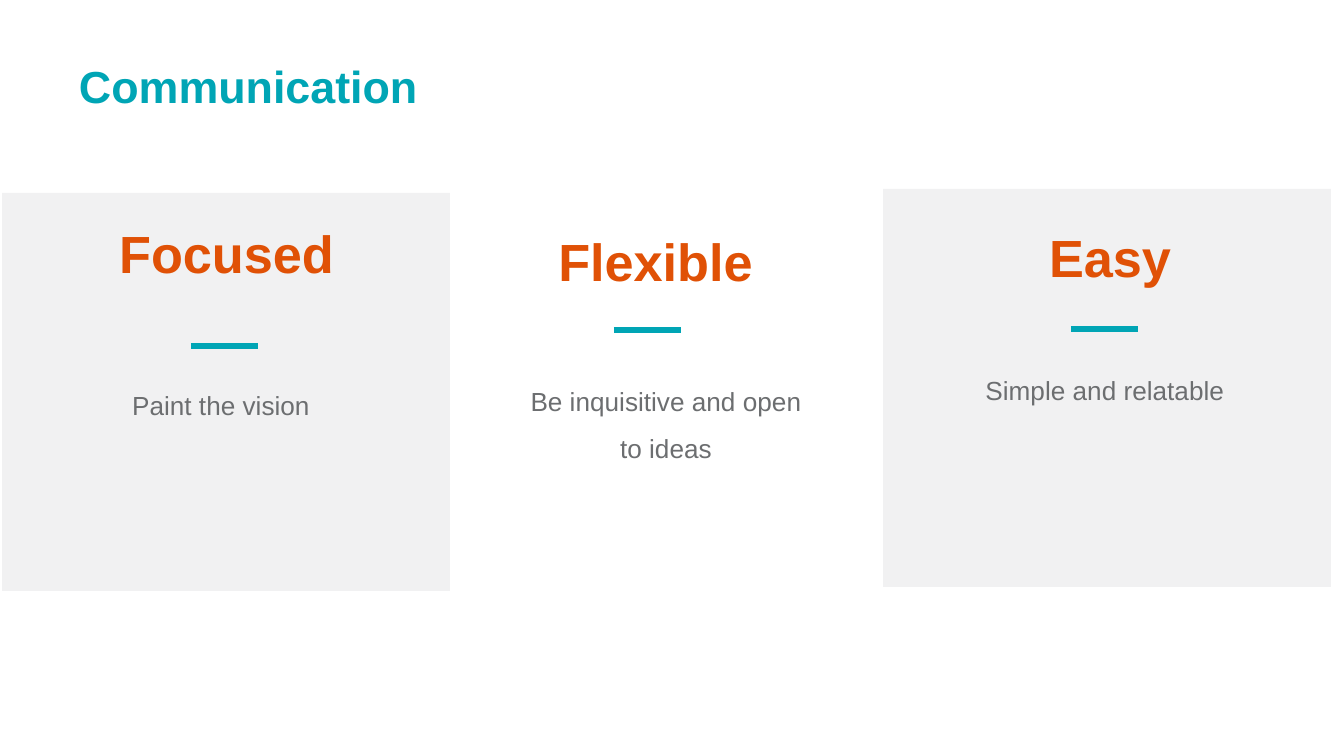
from pptx import Presentation
from pptx.dml.color import RGBColor
from pptx.enum.shapes import MSO_CONNECTOR, MSO_SHAPE
from pptx.enum.text import MSO_ANCHOR, MSO_AUTO_SIZE, PP_ALIGN
from pptx.oxml.ns import qn
from pptx.util import Emu, Pt
from lxml import etree

RECTANGLE = MSO_SHAPE.RECTANGLE
STRAIGHT = MSO_CONNECTOR.STRAIGHT
TOP = MSO_ANCHOR.TOP
LEFT, CENTER = PP_ALIGN.LEFT, PP_ALIGN.CENTER
NO_FIT, GROW = MSO_AUTO_SIZE.NONE, MSO_AUTO_SIZE.SHAPE_TO_FIT_TEXT

EMU_PER_PX = 914400 / 134.4
FONT = "Arial"
COLORS = {"teal": "00A5B5", "orange": "E05106", "gray": "6C6E70", "panel": "F1F1F2"}
PANEL_SIZE = (448, 398)
RULE_WIDTH = 67


def px(count):
    return Emu(round(count * EMU_PER_PX))


def color(name):
    return RGBColor.from_string(COLORS[name])


def write_text(box, text, size, color_name, bold, align, spacing, margins, fit):
    """Fill a box with one paragraph; margins are (side, top) in px."""
    frame = box.text_frame
    frame.word_wrap = True
    frame.auto_size = fit
    frame.vertical_anchor = TOP
    side, top = margins
    frame.margin_left = frame.margin_right = px(side)
    frame.margin_top = frame.margin_bottom = px(top)
    para = frame.paragraphs[0]
    para.text = text
    para.alignment = align
    para.line_spacing = spacing
    para.font.name = FONT
    para.font.size = Pt(size)
    para.font.bold = bold
    para.font.color.rgb = color(color_name)


def add_title(page, text):
    title = page.shapes.title
    title.left, title.top, title.width, title.height = map(px, (66, 48, 1208, 54))
    write_text(title, text, 24, "teal", True, LEFT, 1.0, (13, 11), NO_FIT)


def add_label(shapes, bounds, text, size, color_name, bold=False, spacing=1.0):
    box = shapes.add_textbox(*map(px, bounds))
    write_text(box, text, size, color_name, bold, CENTER, spacing, (5, 3), GROW)


def add_panel(shapes, left, top):
    panel = shapes.add_shape(RECTANGLE, *map(px, (left, top, *PANEL_SIZE)))
    panel.shadow.inherit = False
    panel.fill.solid()
    panel.fill.fore_color.rgb = color("panel")
    panel.line.fill.background()


def add_rule(shapes, left, y):
    rule = shapes.add_connector(STRAIGHT, *map(px, (left, y, left + RULE_WIDTH, y)))
    rule.line.color.rgb = color("teal")
    rule.line.width = Pt(3)
    etree.SubElement(rule._element.spPr, qn("a:effectLst"))


def add_column(page, heading, heading_bounds, detail, detail_bounds, rule, spacing, panel=None):
    shapes = page.shapes.add_group_shape().shapes
    if panel:
        add_panel(shapes, *panel)
    add_label(shapes, heading_bounds, heading, 28, "orange", bold=True)
    add_rule(shapes, *rule)
    add_label(shapes, detail_bounds, detail, 14, "gray", spacing=spacing)


def main():
    deck = Presentation()
    deck.slide_width, deck.slide_height = px(1344), px(756)
    page = deck.slides.add_slide(deck.slide_layouts[5])
    add_title(page, "Communication")
    add_column(page, "Focused", (70, 218, 313, 69),
               "Paint the vision", (84, 386, 274, 36),
               rule=(191, 346), spacing=1.0, panel=(2, 193))
    add_column(page, "Flexible", (524, 226, 263, 69),
               "Be inquisitive and open to ideas", (513, 367, 306, 94),
               rule=(614, 330), spacing=1.5)
    add_column(page, "Easy", (959, 222, 302, 69),
               "Simple and relatable", (938, 356, 334, 47),
               rule=(1071, 329), spacing=1.5, panel=(883, 189))
    deck.save("out.pptx")


if __name__ == "__main__":
    main()
